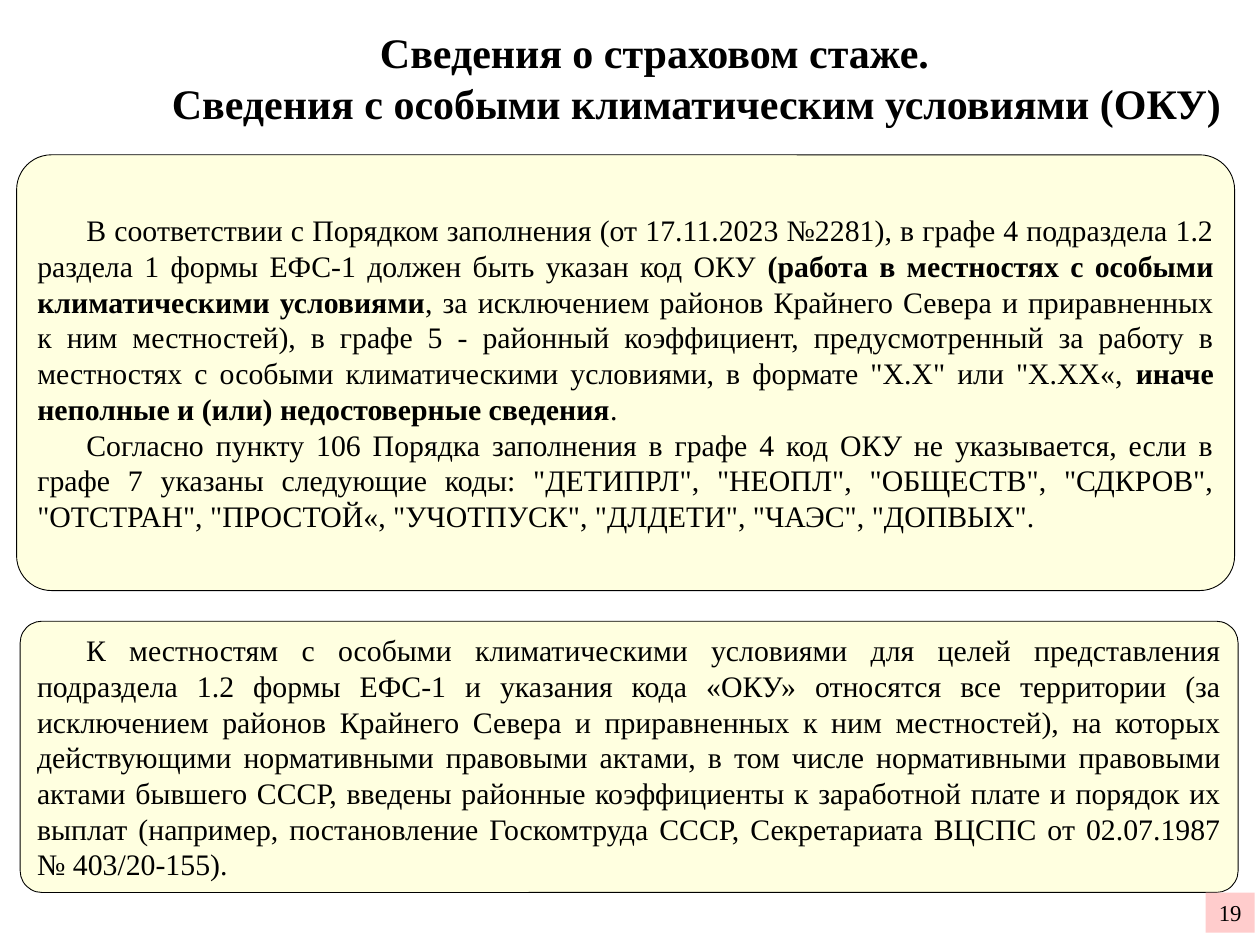
from lxml import etree
from pptx import Presentation
from pptx.dml.color import RGBColor
from pptx.enum.shapes import MSO_SHAPE
from pptx.enum.text import MSO_ANCHOR, PP_ALIGN
from pptx.oxml.ns import qn
from pptx.util import Pt

ROUNDED, RECTANGLE = MSO_SHAPE.ROUNDED_RECTANGLE, MSO_SHAPE.RECTANGLE
MIDDLE = MSO_ANCHOR.MIDDLE
CENTER, JUSTIFY = PP_ALIGN.CENTER, PP_ALIGN.JUSTIFY
FONT = "Times New Roman"
COLORS = {"text": "000000", "panel": "FFFFCC", "number": "FFCCCC"}

TITLE_LINES = [
    ("Сведения о страховом стаже.", 0),
    ("Сведения с особыми климатическим условиями (ОКУ)", 48),
]
FILLING_RULES = [
    [
        ("В соответствии с Порядком заполнения (от 17.11.2023 №2281), в графе 4 "
         "подраздела 1.2 раздела 1 формы ЕФС-1 должен быть указан код ОКУ ", False),
        ("(работа в местностях с особыми климатическими условиями", True),
        (", за исключением районов Крайнего Севера и приравненных к ним местностей), "
         "в графе 5 - районный коэффициент, предусмотренный за работу в местностях с "
         "особыми климатическими условиями, в формате \"X.X\" или \"X.XX«, ", False),
        ("иначе неполные и (или) недостоверные сведения", True),
        (".", False),
    ],
    [
        ("Согласно пункту 106 Порядка заполнения в графе 4 код ОКУ не указывается, "
         "если в графе 7 указаны следующие коды: \"ДЕТИПРЛ\", \"НЕОПЛ\", \"ОБЩЕСТВ\", "
         "\"СДКРОВ\", \"ОТСТРАН\", \"ПРОСТОЙ«, \"УЧОТПУСК\", \"ДЛДЕТИ\", \"ЧАЭС\", "
         "\"ДОПВЫХ\".", False),
    ],
]
TERRITORIES = [
    [
        ("К местностям с особыми климатическими условиями для целей представления "
         "подраздела 1.2 формы ЕФС-1 и указания кода «ОКУ» относятся все территории "
         "(за исключением районов Крайнего Севера и приравненных к ним местностей), на "
         "которых действующими нормативными правовыми актами, в том числе нормативными "
         "правовыми актами бывшего СССР, введены районные коэффициенты к заработной "
         "плате и порядок их выплат (например, постановление Госкомтруда СССР, "
         "Секретариата ВЦСПС от 02.07.1987 № 403/20-155).", False),
    ],
]


def apply(target, values):
    """Set every attribute named in a dict of format values."""
    for name, value in values.items():
        setattr(target, name, value)


def add_run(paragraph, text, size, bold=False):
    """Append one formatted run to a paragraph."""
    run = paragraph.add_run()
    run.text = text
    apply(run.font, {"name": FONT, "size": Pt(size), "bold": bold})
    run.font.color.rgb = RGBColor.from_string(COLORS["text"])


def paragraphs(frame, count):
    """Return the given number of paragraphs of a text frame."""
    return [frame.paragraphs[0]] + [frame.add_paragraph() for _ in range(count - 1)]


def add_box(slide, preset, box, color):
    """Add a filled shape without shadow."""
    shape = slide.shapes.add_shape(preset, *map(Pt, box))
    shape.shadow.inherit = False
    shape.fill.solid()
    shape.fill.fore_color.rgb = RGBColor.from_string(COLORS[color])
    apply(shape.text_frame, {"word_wrap": True, "vertical_anchor": MIDDLE})
    return shape


def set_title(slide):
    """Place the title and write its two lines."""
    title = slide.shapes.title
    apply(title, {"left": Pt(31), "top": Pt(16.5), "width": Pt(686), "height": Pt(55)})
    frame = title.text_frame
    apply(frame, {"word_wrap": True, "vertical_anchor": MIDDLE})
    for paragraph, (line, indent) in zip(paragraphs(frame, len(TITLE_LINES)), TITLE_LINES):
        paragraph.alignment = CENTER
        paragraph._p.get_or_add_pPr().set("marL", str(Pt(indent)))
        add_run(paragraph, line, 24, True)


def add_panel(slide, box, content):
    """Add a translucent rounded panel with justified text."""
    panel = add_box(slide, ROUNDED, box, "panel")
    panel.adjustments[0] = 0.08
    fill_color = panel._element.spPr.find(qn("a:solidFill"))[0]
    etree.SubElement(fill_color, qn("a:alpha")).set("val", "60000")
    panel.line.color.rgb = RGBColor.from_string(COLORS["text"])
    panel.line.width = Pt(0.5)
    frame = panel.text_frame
    apply(frame, {"margin_left": Pt(6), "margin_right": Pt(6),
                  "margin_top": Pt(3.6), "margin_bottom": Pt(3.6)})
    for paragraph, runs in zip(paragraphs(frame, len(content)), content):
        paragraph.alignment = JUSTIFY
        paragraph._p.get_or_add_pPr().set("indent", str(Pt(28)))
        for text, bold in runs:
            add_run(paragraph, text, 17, bold)


def add_page_number(slide, box, number):
    """Add the page number on its coloured tile."""
    tile = add_box(slide, RECTANGLE, box, "number")
    tile.line.fill.background()
    paragraph = tile.text_frame.paragraphs[0]
    paragraph.alignment = CENTER
    add_run(paragraph, number, 13)


def main():
    """Build the slide and save it."""
    deck = Presentation()
    apply(deck, {"slide_width": Pt(720), "slide_height": Pt(540)})
    slide = deck.slides.add_slide(deck.slide_layouts[5])
    set_title(slide)
    add_panel(slide, (9.5, 88.5, 696, 249), FILLING_RULES)
    add_panel(slide, (11.5, 355, 696, 155), TERRITORIES)
    add_page_number(slide, (689, 510, 28, 23), "19")
    deck.save("out.pptx")


if __name__ == "__main__":
    main()
